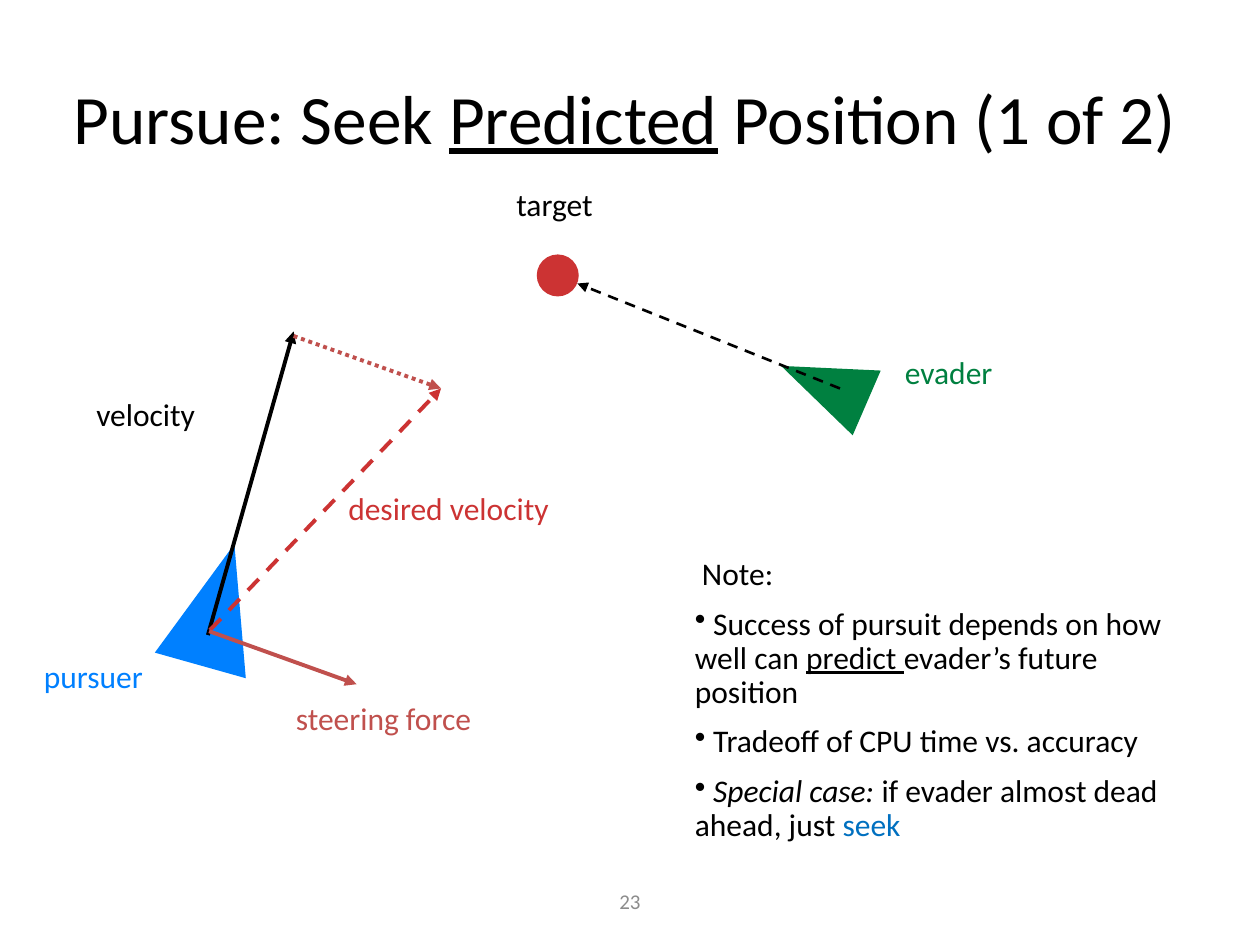
import pptx
import pptx.util
from lxml import etree
from pptx.dml.color import RGBColor
from pptx.enum.dml import MSO_LINE
from pptx.enum.shapes import MSO_CONNECTOR, MSO_SHAPE
from pptx.enum.text import MSO_ANCHOR, PP_ALIGN
from pptx.oxml.ns import qn

Pt = pptx.util.Pt
FONT = "Calibri"
BLACK, RED, BRICK = "000000", "CC3333", "C0504D"
BLUE, GREEN, LINK, GRAY = "0080FF", "008040", "0070C0", "8C8C8C"

# Runs: (text, style)
TITLE = [("Pursue: Seek ", ""), ("Predicted", "underline"), (" Position (1 of 2)", "")]
NOTE_HEADING = [(" Note:", "")]
NOTE_POINTS = [
    [(" Success of pursuit depends on how well can ", ""),
     ("predict ", "underline"), ("evader’s future position", "")],
    [(" Tradeoff of CPU time vs. accuracy", "")],
    [(" ", ""), ("Special case: ", "italic"),
     ("if evader almost dead ahead, just ", ""), ("seek", "link")],
]

# Bodies: (shape, left, top, width, height, rotation, colour)
BODIES = [
    (MSO_SHAPE.ISOSCELES_TRIANGLE, 97.2, 309.6, 54, 72, 15.7, BLUE),
    (MSO_SHAPE.ISOSCELES_TRIANGLE, 450.7, 193, 40.3, 53.3, 293.4, GREEN),
    (MSO_SHAPE.OVAL, 306.7, 145.4, 24, 24, 0, RED),
]

# Arrows: (start, tip, colour, weight, dash)
ARROWS = [
    ((118.8, 362.9), (167.8, 189.4), BLACK, 2.25, None),
    ((167.8, 192), (252, 222), BRICK, 2.25, MSO_LINE.ROUND_DOT),
    ((120, 360), (252, 222), RED, 2.25, MSO_LINE.DASH),
    ((119.5, 360.7), (203.8, 391), BRICK, 2.25, None),
    ((480, 222), (330, 162), BLACK, 1.5, MSO_LINE.DASH),
]

# Labels: (text, left, top, width, colour)
LABELS = [
    ("velocity", 48, 222, 138, BLACK),
    ("desired velocity", 192, 276, 222, RED),
    ("steering force", 162, 396, 240, BRICK),
    ("target", 288, 102, 102, BLACK),
    ("evader", 510, 198, 102, GREEN),
    ("pursuer", 18, 372, 108, BLUE),
]


def rgb(hex_colour):
    return RGBColor.from_string(hex_colour)


def write(paragraph, runs, size, colour=BLACK):
    paragraph.font.name = FONT
    paragraph.font.size = Pt(size)
    paragraph.font.color.rgb = rgb(colour)
    for words, style in runs:
        run = paragraph.add_run()
        run.text = words
        if style == "underline":
            run.font.underline = True
        elif style == "italic":
            run.font.italic = True
        elif style == "link":
            run.font.color.rgb = rgb(LINK)


def add_text_frame(slide, left, top, width, height):
    frame = slide.shapes.add_textbox(Pt(left), Pt(top), Pt(width), Pt(height)).text_frame
    frame.word_wrap = True
    return frame


def add_body(slide, kind, left, top, width, height, rotation, colour):
    body = slide.shapes.add_shape(kind, Pt(left), Pt(top), Pt(width), Pt(height))
    body.rotation = rotation
    body.shadow.inherit = False
    body.fill.solid()
    body.fill.fore_color.rgb = rgb(colour)
    body.line.fill.background()


def add_arrow(slide, start, tip, colour, weight, dash):
    arrow = slide.shapes.add_connector(
        MSO_CONNECTOR.STRAIGHT, *[Pt(value) for value in start + tip])
    arrow.line.color.rgb = rgb(colour)
    arrow.line.width = Pt(weight)
    if dash is not None:
        arrow.line.dash_style = dash
    etree.SubElement(arrow.line._get_or_add_ln(), qn("a:tailEnd"), type="triangle")
    etree.SubElement(arrow._element.spPr, qn("a:effectLst"))


def add_title(slide):
    title = slide.shapes.title
    title.left, title.top, title.width, title.height = Pt(6), Pt(21.6), Pt(702), Pt(90)
    frame = title.text_frame
    frame.vertical_anchor = MSO_ANCHOR.MIDDLE
    frame.paragraphs[0].alignment = PP_ALIGN.CENTER
    write(frame.paragraphs[0], TITLE, 39.6)


def add_note(slide):
    frame = add_text_frame(slide, 390, 313.2, 300, 178.6)
    write(frame.paragraphs[0], NOTE_HEADING, 18)
    for point in NOTE_POINTS:
        paragraph = frame.add_paragraph()
        paragraph.line_spacing = 0.9
        paragraph.space_before = Pt(9)
        etree.SubElement(paragraph._p.get_or_add_pPr(), qn("a:buChar"), char="•")
        write(paragraph, point, 18)


def add_slide_number(slide):
    frame = add_text_frame(slide, 246, 500.4, 228, 28.8)
    frame.vertical_anchor = MSO_ANCHOR.MIDDLE
    frame.paragraphs[0].alignment = PP_ALIGN.CENTER
    write(frame.paragraphs[0], [("23", "")], 12, GRAY)


def main():
    deck = pptx.Presentation()
    deck.slide_width, deck.slide_height = Pt(720), Pt(540)
    slide = deck.slides.add_slide(deck.slide_layouts[5])
    add_title(slide)
    for body in BODIES:
        add_body(slide, *body)
    for arrow in ARROWS:
        add_arrow(slide, *arrow)
    for words, left, top, width, colour in LABELS:
        frame = add_text_frame(slide, left, top, width, 36)
        write(frame.paragraphs[0], [(words, "")], 18, colour)
    add_note(slide)
    add_slide_number(slide)
    deck.save("out.pptx")


if __name__ == "__main__":
    main()
